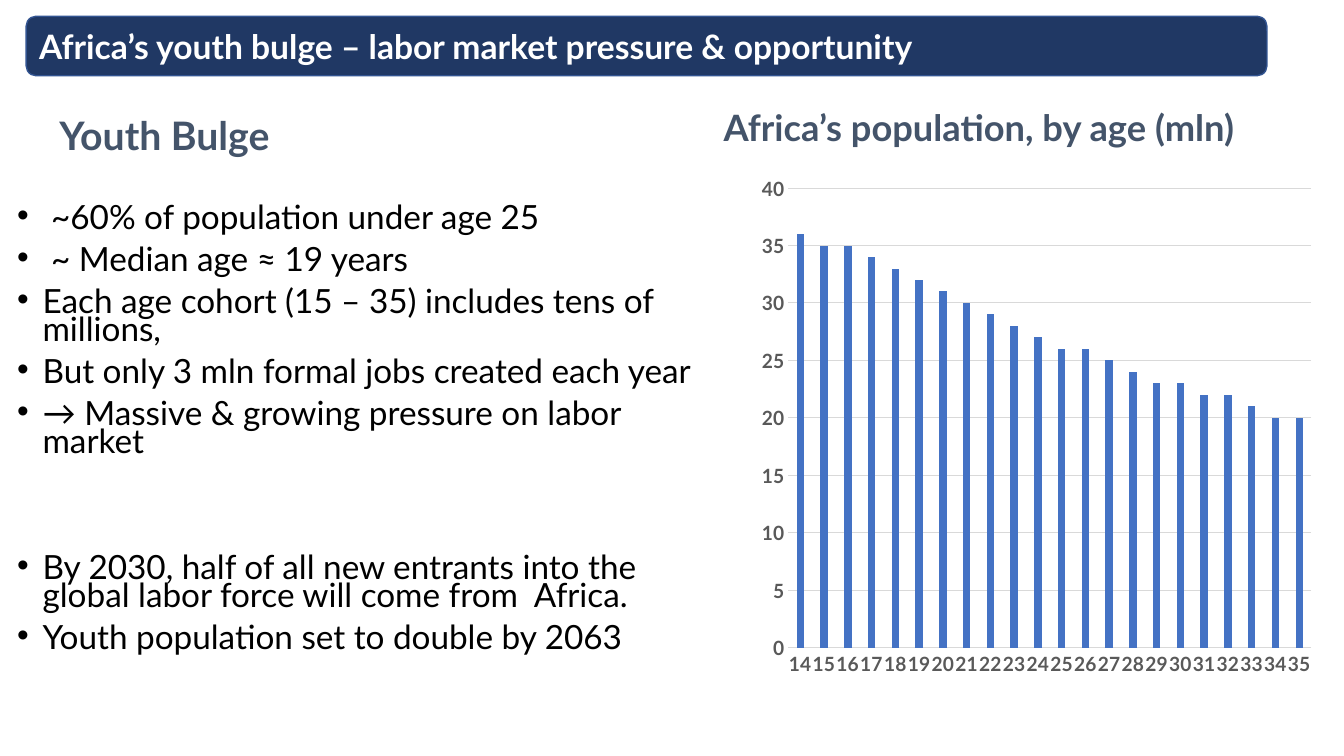
from dataclasses import dataclass

from lxml.etree import SubElement
from pptx import Presentation
from pptx.chart.chart import Chart
from pptx.chart.data import CategoryChartData
from pptx.dml.color import RGBColor
from pptx.enum.chart import XL_CHART_TYPE, XL_TICK_MARK
from pptx.enum.shapes import MSO_SHAPE
from pptx.enum.text import MSO_ANCHOR, MSO_AUTO_SIZE, PP_ALIGN
from pptx.oxml.ns import qn
from pptx.shapes.base import BaseShape
from pptx.slide import Slide
from pptx.text.text import TextFrame
from pptx.util import Cm, Pt


@dataclass(frozen=True)
class Theme:
    font: str = "Lato"
    banner: RGBColor = RGBColor(0x20, 0x38, 0x64)
    banner_line: RGBColor = RGBColor(0x32, 0x54, 0x91)
    banner_text: RGBColor = RGBColor(0xFF, 0xFF, 0xFF)
    heading: RGBColor = RGBColor(0x44, 0x54, 0x6A)
    body: RGBColor = RGBColor(0, 0, 0)
    axis_text: RGBColor = RGBColor(0x59, 0x59, 0x59)
    grid: RGBColor = RGBColor(0xD9, 0xD9, 0xD9)
    bars: RGBColor = RGBColor(0x44, 0x72, 0xC4)
    title_size: float = 24
    body_size: float = 23.8
    axis_size: float = 14


@dataclass(frozen=True)
class Box:
    left: float
    top: float
    width: float
    height: float


@dataclass(frozen=True)
class Heading:
    placeholder: int
    text: str
    box: Box
    size: float
    line_spacing: float


@dataclass(frozen=True)
class Bullet:
    text: str
    space_before: float = 10


THEME = Theme()
BANNER_BOX = Box(0.66, 0.41, 31.27, 1.5)
TITLE_BOX = Box(0.73, 0.41, 31.13, 1.5)
LIST_BOX = Box(0.18, 5.08, 17.81, 11.99)
CHART_BOX = Box(19.2, 4.19, 14.12, 13.13)
PLOT_AREA = {"x": 0.025, "y": 0.042, "w": 0.955, "h": 0.882}
LIST_PLACEHOLDER = 2
UNUSED_PLACEHOLDER = 4

HEADINGS = [
    Heading(1, "Youth Bulge", Box(1.24, 2.82, 15.67, 1.37), 28, 0.9),
    Heading(3, "Africa’s population, by age (mln)", Box(17.98, 2.82, 14.4, 1.12), 25.9, 0.7),
]
BULLETS = [
    Bullet(" ~60% of population under age 25", 0),
    Bullet(" ~ Median age ≈ 19 years"),
    Bullet("Each age cohort (15 – 35) includes tens of millions,"),
    Bullet("But only 3 mln formal jobs created each year"),
    Bullet("→ Massive & growing pressure on labor market"),
    Bullet("By 2030, half of all new entrants into the global labor force will come from  Africa.", 70),
    Bullet("Youth population set to double by 2063"),
]
FIRST_AGE = 14
POPULATION = [36, 35, 35, 34, 33, 32, 31, 30, 29, 28, 27,
              26, 26, 25, 24, 23, 23, 22, 22, 21, 20, 20]


def place(shape: BaseShape, box: Box) -> None:
    shape.left, shape.top = Cm(box.left), Cm(box.top)
    shape.width, shape.height = Cm(box.width), Cm(box.height)


def prepare_frame(frame: TextFrame, anchor: MSO_ANCHOR) -> None:
    frame.word_wrap = True
    frame.auto_size = MSO_AUTO_SIZE.NONE
    frame.vertical_anchor = anchor


def write_text(frame: TextFrame, text: str, *, size: float, color: RGBColor,
               bold: bool = False, line_spacing: float = 1.0,
               space_before: float = 0, bullet: bool = False,
               new_paragraph: bool = False) -> None:
    paragraph = frame.add_paragraph() if new_paragraph else frame.paragraphs[0]
    if bullet:
        properties = paragraph._p.get_or_add_pPr()
        properties.set("marL", str(Cm(0.64)))
        properties.set("indent", str(Cm(-0.64)))
        SubElement(properties, qn("a:buFont"), typeface="Arial")
        SubElement(properties, qn("a:buChar"), char="•")
    paragraph.alignment = PP_ALIGN.LEFT
    paragraph.line_spacing = line_spacing
    paragraph.space_before = Pt(space_before)
    paragraph.space_after = Pt(0)
    run = paragraph.add_run()
    run.text = text
    run.font.name = THEME.font
    run.font.size = Pt(size)
    run.font.bold = bold
    run.font.color.rgb = color


def add_title(slide: Slide) -> None:
    banner = slide.shapes.add_shape(
        MSO_SHAPE.ROUNDED_RECTANGLE, Cm(BANNER_BOX.left), Cm(BANNER_BOX.top),
        Cm(BANNER_BOX.width), Cm(BANNER_BOX.height))
    banner.shadow.inherit = False
    banner.fill.solid()
    banner.fill.fore_color.rgb = THEME.banner
    banner.line.color.rgb = THEME.banner_line
    banner.line.width = Pt(1)
    title = slide.shapes.title
    title.element.addprevious(banner.element)
    place(title, TITLE_BOX)
    prepare_frame(title.text_frame, MSO_ANCHOR.MIDDLE)
    write_text(title.text_frame, "Africa’s youth bulge – labor market pressure & opportunity",
               size=THEME.title_size, color=THEME.banner_text, bold=True)


def add_heading(slide: Slide, heading: Heading) -> None:
    shape = slide.placeholders[heading.placeholder]
    place(shape, heading.box)
    prepare_frame(shape.text_frame, MSO_ANCHOR.TOP)
    write_text(shape.text_frame, heading.text, size=heading.size, color=THEME.heading,
               bold=True, line_spacing=heading.line_spacing)


def add_bullets(slide: Slide) -> None:
    shape = slide.placeholders[LIST_PLACEHOLDER]
    place(shape, LIST_BOX)
    prepare_frame(shape.text_frame, MSO_ANCHOR.TOP)
    for index, bullet in enumerate(BULLETS):
        write_text(shape.text_frame, bullet.text, size=THEME.body_size, color=THEME.body,
                   line_spacing=0.7, space_before=bullet.space_before,
                   bullet=True, new_paragraph=index > 0)


def fix_plot_area(chart: Chart) -> None:
    plot_area = chart.element.find(".//" + qn("c:plotArea"))
    for old_layout in plot_area.findall(qn("c:layout")):
        plot_area.remove(old_layout)
    layout = SubElement(plot_area, qn("c:layout"))
    plot_area.insert(0, layout)
    manual = SubElement(layout, qn("c:manualLayout"))
    settings = {"layoutTarget": "inner", "xMode": "edge", "yMode": "edge", **PLOT_AREA}
    for name, value in settings.items():
        SubElement(manual, qn(f"c:{name}"), val=str(value))


def add_population_chart(slide: Slide) -> None:
    data = CategoryChartData(number_format="#,##0")
    data.categories = [str(FIRST_AGE + index) for index in range(len(POPULATION))]
    data.add_series("Series 1", POPULATION)
    chart = slide.shapes.add_chart(
        XL_CHART_TYPE.COLUMN_CLUSTERED, Cm(CHART_BOX.left), Cm(CHART_BOX.top),
        Cm(CHART_BOX.width), Cm(CHART_BOX.height), data).chart
    chart.has_title = False
    chart.has_legend = False
    chart.font.name = THEME.font
    chart.font.size = Pt(THEME.axis_size)
    chart.font.bold = True
    chart.font.color.rgb = THEME.body
    plot = chart.plots[0]
    plot.vary_by_categories = False
    plot.gap_width = 219
    plot.overlap = -27
    plot.series[0].format.fill.solid()
    plot.series[0].format.fill.fore_color.rgb = THEME.bars
    ages, millions = chart.category_axis, chart.value_axis
    for axis in (ages, millions):
        axis.major_tick_mark = XL_TICK_MARK.NONE
        axis.minor_tick_mark = XL_TICK_MARK.NONE
        font = axis.tick_labels.font
        font.name, font.size, font.bold = THEME.font, Pt(THEME.axis_size), True
        font.color.rgb = THEME.axis_text
    millions.minimum_scale, millions.maximum_scale, millions.major_unit = 0, 40, 5
    millions.tick_labels.number_format = "#,##0"
    millions.tick_labels.number_format_is_linked = False
    millions.format.line.fill.background()
    for line in (ages.format.line, millions.major_gridlines.format.line):
        line.color.rgb = THEME.grid
        line.width = Pt(0.75)
    fix_plot_area(chart)


def main() -> None:
    presentation = Presentation()
    presentation.slide_width, presentation.slide_height = Cm(33.87), Cm(19.05)
    slide = presentation.slides.add_slide(presentation.slide_layouts[4])
    unused = slide.placeholders[UNUSED_PLACEHOLDER].element
    unused.getparent().remove(unused)
    add_title(slide)
    for heading in HEADINGS:
        add_heading(slide, heading)
    add_bullets(slide)
    add_population_chart(slide)
    presentation.save("out.pptx")


if __name__ == "__main__":
    main()
